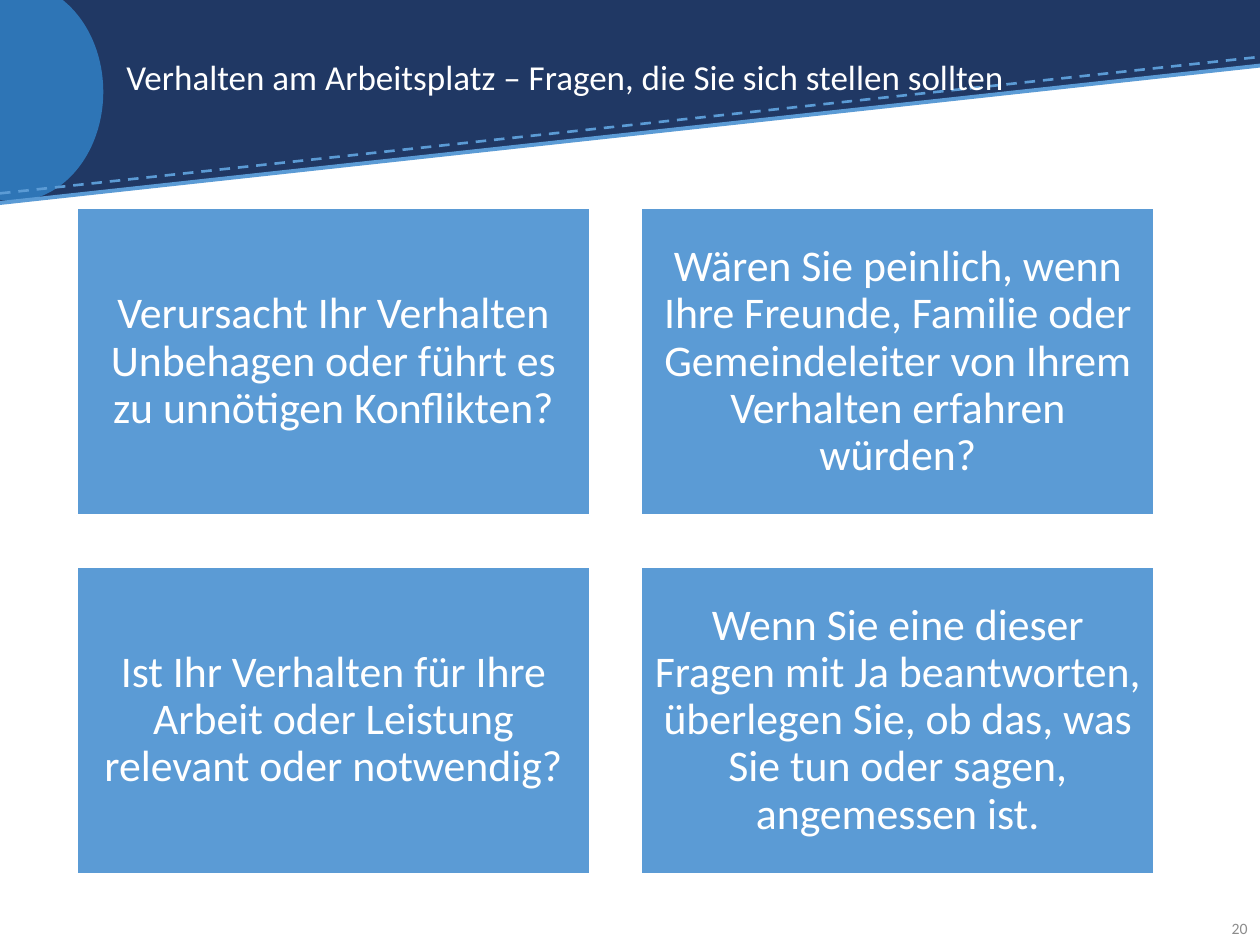
from dataclasses import dataclass

from lxml.etree import SubElement
from pptx import Presentation
from pptx.dml.color import RGBColor
from pptx.enum.dml import MSO_LINE_DASH_STYLE as Dash
from pptx.enum.shapes import MSO_CONNECTOR as Connector, MSO_SHAPE as Shape
from pptx.enum.text import MSO_ANCHOR as Anchor, MSO_AUTO_SIZE as AutoSize, PP_ALIGN as Align
from pptx.oxml.ns import qn
from pptx.util import Pt


@dataclass(frozen=True)
class Theme:
    """Colours, font and type sizes of the deck."""
    navy: str = "203864"
    blue: str = "2E75B6"
    sky: str = "5B9BD5"
    white: str = "FFFFFF"
    grey: str = "8C8C8C"
    font: str = "Calibri"
    title: int = 20
    card: int = 25
    number: int = 9


def write(box, text, *, theme, size, color, align=Align.LEFT, spacing=None, inset=7.2, inset_y=3.6):
    """Fill the box with one formatted paragraph, centred vertically."""
    frame = box.text_frame
    frame.word_wrap = True
    frame.auto_size = AutoSize.NONE
    frame.vertical_anchor = Anchor.MIDDLE
    frame.margin_left = frame.margin_right = Pt(inset)
    frame.margin_top = frame.margin_bottom = Pt(inset_y)
    para = frame.paragraphs[0]
    para.alignment = align
    para.line_spacing = spacing
    span = para.add_run()
    span.text = text
    span.font.name = theme.font
    span.font.size = Pt(size)
    span.font.color.rgb = RGBColor.from_string(color)


class PageBuilder:
    """Draws styled elements on the current slide."""

    def __init__(self, page, theme):
        """Keep the slide and its style."""
        self.page = page
        self.theme = theme

    def shape(self, kind, area, fill, outline=None, flip=False):
        """Add a filled preset shape."""
        box = self.page.shapes.add_shape(kind, *map(Pt, area))
        box.shadow.inherit = False
        box.fill.solid()
        box.fill.fore_color.rgb = RGBColor.from_string(fill)
        if outline:
            box.line.color.rgb = RGBColor.from_string(outline)
            box.line.width = Pt(1)
        else:
            box.line.fill.background()
        if flip:
            box.element.spPr.xfrm.set("flipV", "1")
        return box

    def line(self, start, end, width, dash=None):
        """Add a straight line without shadow."""
        line = self.page.shapes.add_connector(Connector.STRAIGHT, *map(Pt, start + end))
        line.line.color.rgb = RGBColor.from_string(self.theme.sky)
        line.line.width = Pt(width)
        if dash:
            line.line.dash_style = dash
        SubElement(line.element.spPr, qn("a:effectLst"))

    def title(self, text, area):
        """Place the title placeholder in front of the header."""
        box = self.page.shapes.title
        box.left, box.top, box.width, box.height = map(Pt, area)
        box.element.getparent().append(box.element)
        write(box, text, theme=self.theme, size=self.theme.title, color=self.theme.white, spacing=0.9)

    def number(self, text, area):
        """Add the page number."""
        box = self.page.shapes.add_textbox(*map(Pt, area))
        write(box, text, theme=self.theme, size=self.theme.number, color=self.theme.grey, align=Align.RIGHT)

    def card(self, text, area):
        """Add a question card."""
        box = self.shape(Shape.RECTANGLE, area, self.theme.sky, outline=self.theme.white)
        write(box, text, theme=self.theme, size=self.theme.card, color=self.theme.white,
              align=Align.CENTER, spacing=0.9, inset_y=7.2)

    def header(self):
        """Draw the slanted header band."""
        self.shape(Shape.RECTANGLE, (0, 0, 720, 37.5), self.theme.navy)
        self.shape(Shape.RIGHT_TRIANGLE, (0, 37, 720, 78.5), self.theme.navy, flip=True)
        self.shape(Shape.OVAL, (-42.5, -10, 101.5, 125), self.theme.blue)
        self.line((0, 110.5), (720, 32.5), 1.5, Dash.DASH)
        self.line((0, 116), (720, 37.5), 2.25)


QUESTIONS = [
    "Verursacht Ihr Verhalten Unbehagen oder führt es zu unnötigen Konflikten?",
    "Wären Sie peinlich, wenn Ihre Freunde, Familie oder Gemeindeleiter von Ihrem Verhalten erfahren würden?",
    "Ist Ihr Verhalten für Ihre Arbeit oder Leistung relevant oder notwendig?",
    "Wenn Sie eine dieser Fragen mit Ja beantworten, überlegen Sie, ob das, was Sie tun oder sagen, angemessen ist.",
]


def main():
    """Build and save the deck."""
    deck = Presentation()
    deck.slide_width, deck.slide_height = Pt(720), Pt(540)
    builder = PageBuilder(deck.slides.add_slide(deck.slide_layouts[5]), Theme())
    builder.header()
    builder.title("Verhalten am Arbeitsplatz – Fragen, die Sie sich stellen sollten", (65, 14.5, 579.5, 62))
    builder.number("20", (682, 516, 38, 29))
    left, top, width, height, gap = 44, 119, 293, 175.5, 29.5
    for index, question in enumerate(QUESTIONS):
        row, column = divmod(index, 2)
        builder.card(question, (left + column * (width + gap), top + row * (height + gap), width, height))
    deck.save("out.pptx")


if __name__ == "__main__":
    main()
